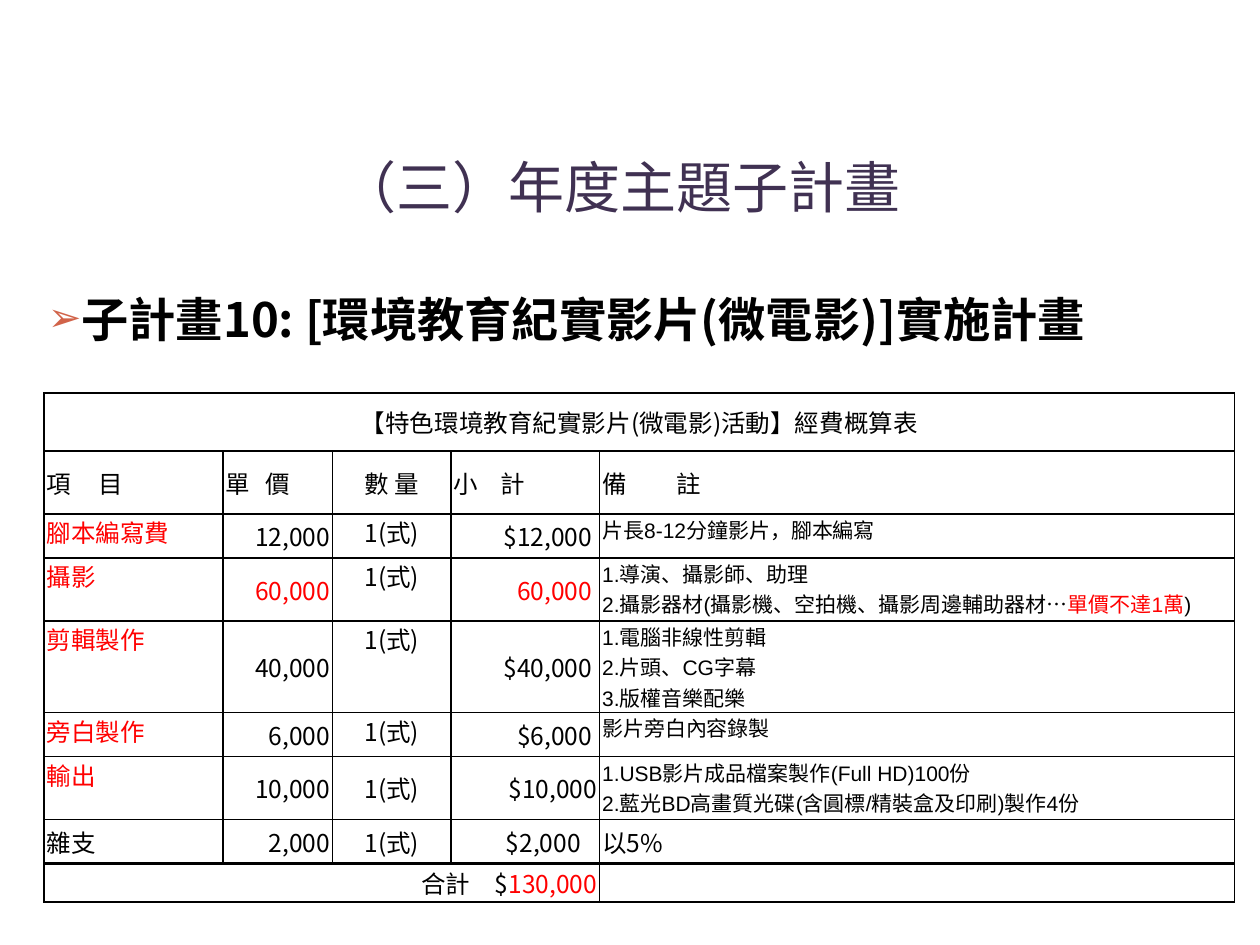
"""Build the budget slide for the yearly sub-plan on a documentary film."""
from pptx import Presentation
from pptx.dml.color import RGBColor
from pptx.enum.text import MSO_ANCHOR as Anchor, MSO_AUTO_SIZE as Auto, PP_ALIGN as Align
from pptx.oxml.ns import qn
from pptx.util import Inches, Pt
from lxml.etree import SubElement as Sub

BLACK = RGBColor(0, 0, 0)
RED = RGBColor(255, 0, 0)
PLUM = RGBColor(0x40, 0x31, 0x52)
RUST = RGBColor(0xD1, 0x63, 0x49)
SC, JP, ARIAL = "Noto Sans CJK SC", "Noto Sans CJK JP", "Arial"
LEFT, MID, RIGHT = Align.LEFT, Align.CENTER, Align.RIGHT
TOP, HALF = Anchor.TOP, Anchor.MIDDLE

deck = Presentation()
deck.slide_width, deck.slide_height = Inches(10), Inches(7.5)
W, H = deck.slide_width / 100, deck.slide_height / 100
slide = deck.slides.add_slide(deck.slide_layouts[1])
title, body = slide.placeholders


def write(para, parts, size, face, align=LEFT, bold=False):
    """Add runs given as (text, colour) or (text, colour, face)."""
    para.alignment = align
    for text, color, *other in parts:
        run = para.add_run()
        run.text = text
        name = other[0] if other else face
        form = {"size": Pt(size), "name": name, "bold": bold}
        for key, val in form.items():
            setattr(run.font, key, val)
        run.font.color.rgb = color
        east = SC if name == ARIAL else name
        Sub(run.font._element, qn("a:ea"), typeface=east)


def fill(cell, lines, size=14, face=SC, align=LEFT, anchor=HALF, pad=0.2, tab=None):
    """Write one paragraph per line into a table cell."""
    cell.vertical_anchor = anchor
    cell.margin_right = int(pad * W)
    frame = cell.text_frame
    for i, parts in enumerate(lines):
        para = frame.add_paragraph() if i else frame.paragraphs[0]
        if tab:
            stops = Sub(para._p.get_or_add_pPr(), qn("a:tabLst"))
            Sub(stops, qn("a:tab"), pos=str(int(tab * W)), algn="l")
        write(para, parts, size, face, align)


places = [(title, 4.3, 13.2, 89.9, 12.93), (body, 2.8, 30, 95.3, 67.2)]
for shape, x, y, w, h in places:
    shape.left, shape.top = int(x * W), int(y * H)
    shape.width, shape.height = int(w * W), int(h * H)
    shape.text_frame.auto_size = Auto.NONE
    shape.text_frame.word_wrap = True

title.text_frame.vertical_anchor = HALF
write(title.text_frame.paragraphs[0], [("（三）年度主題子計畫", PLUM)], 32, JP, MID)

body.text_frame.vertical_anchor = TOP
lead = body.text_frame.paragraphs[0]
lead.space_before = Pt(0)
props = lead._p.get_or_add_pPr()
props.set("marL", str(int(2.5 * W)))
props.set("indent", str(int(-2.5 * W)))
Sub(Sub(props, qn("a:buClr")), qn("a:srgbClr"), val=str(RUST))
Sub(props, qn("a:buSzPct"), val="85000")
Sub(props, qn("a:buChar"), char="➢")
write(lead, [("子計畫10: [環境教育紀實影片(微電影)]實施計畫", BLACK)], 27, SC, bold=True)

cols = [14.2, 8.7, 9.4, 11.8, 50.4]
rows = [6.13, 6.67, 4.67, 6.67, 6.67, 4.67, 6.67, 4.67, 3.73]
last = len(rows) - 1
frame = slide.shapes.add_table(len(rows), len(cols), int(3.5 * W), int(41.6 * H),
                               int(sum(cols) * W), int(sum(rows) * H))
table = frame.table
table.first_row = table.horz_banding = False
for col, w in zip(table.columns, cols):
    col.width = int(w * W)
for row, h in zip(table.rows, rows):
    row.height = int(h * H)

for r in range(len(rows)):
    for c in range(len(cols)):
        cell = table.cell(r, c)
        cell.margin_left = cell.margin_right = int(0.2 * W)
        cell.margin_top = cell.margin_bottom = 0
        for side in "LRTB":
            thick = (r, side) in [(last - 1, "B"), (last, "T")]
            edge = Sub(cell._tc.get_or_add_tcPr(), qn("a:ln" + side),
                       w=str(Pt(2.25 if thick else 1)))
            Sub(Sub(edge, qn("a:solidFill")), qn("a:srgbClr"), val=str(BLACK))
        cell.fill.background()

table.cell(0, 0).merge(table.cell(0, 4))
table.cell(last, 0).merge(table.cell(last, 3))
fill(table.cell(0, 0), [[("【特色環境教育紀實影片(微電影)活動】經費概算表", BLACK)]], align=MID)

heads = [("項\t目", LEFT, 4.1), ("單\t價", LEFT, 3.2), ("數 量", MID, None),
         ("小\t計", LEFT, 3.7), ("備\t註", LEFT, 5.9)]
for c, (text, align, tab) in enumerate(heads):
    fill(table.cell(1, c), [[(text, BLACK)]], align=align, tab=tab)

items = [
    ("腳本編寫費", "12,000", "$12,000", BLACK, TOP, 0.6,
     [[("片長8-12分鐘影片，腳本編寫", BLACK)]]),
    ("攝影", "60,000", "60,000", RED, TOP, 0.6,
     [[("1.導演、攝影師、助理", BLACK)],
      [("2.攝影器材(攝影機、空拍機、攝影周邊輔助器材…", BLACK),
       ("單價不達1萬", RED), (")", BLACK)]]),
    ("剪輯製作", "40,000", "$40,000", BLACK, TOP, 0.6,
     [[("1.電腦非線性剪輯", BLACK)], [("2.片頭、CG字幕", BLACK)],
      [("3.版權音樂配樂", BLACK)]]),
    ("旁白製作", "6,000", "$6,000", BLACK, TOP, 0.6,
     [[("影片旁白內容錄製", BLACK)]]),
    ("輸出", "10,000", "$10,000", BLACK, HALF, 0.2,
     [[("1.USB影片成品檔案製作(Full HD)100份", BLACK)],
      [("2.藍光BD高畫質光碟(含圓標/精裝盒及印刷)製作4份", BLACK)]]),
    ("雜支", "2,000", "$2,000", BLACK, HALF, 1.5, [[("以5%", BLACK)]]),
]
for r, (name, price, total, color, anchor, pad, notes) in enumerate(items, 2):
    misc = r == last - 1
    face, place = (SC, HALF) if misc else (ARIAL, TOP)
    fill(table.cell(r, 0), [[(name, BLACK if misc else RED)]], face=face, anchor=place)
    fill(table.cell(r, 1), [[(price, color)]], align=RIGHT)
    fill(table.cell(r, 2), [[("1(式)", BLACK)]], align=MID, anchor=anchor)
    fill(table.cell(r, 3), [[(total, color)]], face=JP, align=RIGHT, pad=pad)
    fill(table.cell(r, 4), notes, 14 if misc else 12, face, anchor=place)

fill(table.cell(last, 0), [[("合計　", BLACK), ("$", BLACK, JP), ("130,000", RED, JP)]],
     align=RIGHT)

deck.save("out.pptx")
